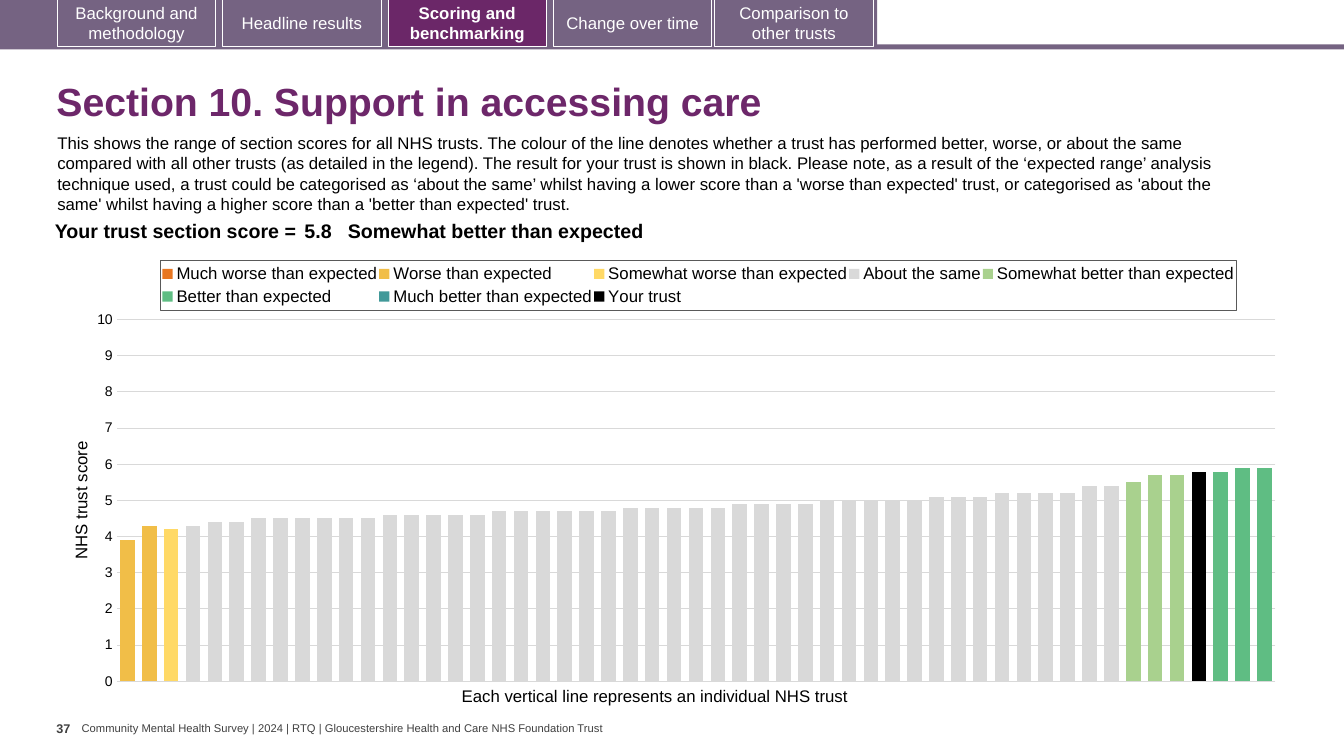
from copy import deepcopy
from dataclasses import dataclass

from pptx import Presentation
from pptx.chart.axis import ValueAxis
from pptx.chart.data import CategoryChartData
from pptx.dml.color import RGBColor
from pptx.enum.chart import XL_CHART_TYPE, XL_LEGEND_POSITION, XL_TICK_LABEL_POSITION, XL_TICK_MARK
from pptx.enum.shapes import MSO_SHAPE
from pptx.enum.text import MSO_ANCHOR, MSO_AUTO_SIZE, PP_ALIGN
from pptx.oxml import parse_xml
from pptx.oxml.ns import nsdecls, qn
from pptx.util import Pt

PX = 9144


@dataclass(frozen=True)
class Theme:
    face: str = "Arial"
    plum: str = "6D276A"
    live: str = "6B2768"
    bar: str = "756382"
    white: str = "FFFFFF"
    ink: str = "000000"
    grey: str = "404040"
    grid: str = "D9D9D9"
    edge: str = "595959"
    head: int = 28
    score: int = 14
    body: int = 12
    tick: int = 10
    page: int = 9
    foot: int = 8


THEME = Theme()

TABS = [
    (57, "Background and methodology"),
    (221, "Headline results"),
    (385, "Scoring and benchmarking"),
    (549, "Change over time"),
    (709, "Comparison to other trusts"),
]
LIVE = 2

INTRO = (
    "This shows the range of section scores for all NHS trusts. The colour of the line denotes "
    "whether a trust has performed better, worse, or about the same compared with all other trusts "
    "(as detailed in the legend). The result for your trust is shown in black. Please note, as a "
    "result of the ‘expected range’ analysis technique used, a trust could be categorised as "
    "‘about the same’ whilst having a lower score than a 'worse than expected' trust, or "
    "categorised as 'about the same' whilst having a higher score than a 'better than expected' trust."
)

COUNT = 53
SAME = [4.3, 4.4, 4.4] + [4.5] * 6 + [4.6] * 5 + [4.7] * 6 + [4.8] * 5 + [4.9] * 4
SAME += [5.0] * 5 + [5.1] * 3 + [5.2] * 4 + [5.4] * 2
BANDS = [
    ("Much worse than expected", "E87722", 0, []),
    ("Worse than expected", "F1BE48", 0, [3.9, 4.3]),
    ("Somewhat worse than expected", "FFD966", 2, [4.2]),
    ("About the same", "D9D9D9", 3, SAME),
    ("Somewhat better than expected", "A9D18E", 46, [5.5, 5.7, 5.7, 5.8]),
    ("Better than expected", "5FBD83", 50, [5.8, 5.9, 5.9]),
    ("Much better than expected", "419999", 0, []),
    ("Your trust", "000000", 49, [5.8]),
]


def scale(*box):
    return [n * PX for n in box]


def style(font, size, tint, bold=False):
    font.name = THEME.face
    font.size = Pt(size)
    font.bold = bold
    font.color.rgb = RGBColor.from_string(tint)


def write(frame, text, size, tint, bold=False, align=PP_ALIGN.LEFT):
    frame.text = text
    line = frame.paragraphs[0]
    line.alignment = align
    style(line.runs[0].font, size, tint, bold)


def label(slide, box, text, size, tint, bold=False, wrap=False, pad=10, anchor=MSO_ANCHOR.TOP):
    frame = slide.shapes.add_textbox(*scale(*box)).text_frame
    frame.word_wrap = wrap
    frame.vertical_anchor = anchor
    frame.margin_left = frame.margin_right = pad * PX
    write(frame, text, size, tint, bold)


def block(slide, box, fill, edge=None):
    shape = slide.shapes.add_shape(MSO_SHAPE.RECTANGLE, *scale(*box))
    shape.shadow.inherit = False
    shape.fill.solid()
    shape.fill.fore_color.rgb = RGBColor.from_string(fill)
    if edge:
        shape.line.color.rgb = RGBColor.from_string(edge)
        shape.line.width = Pt(0.75)
    else:
        shape.line.fill.background()
    return shape


def menu(slide, box):
    left, top, width, height = box
    block(slide, (left, top + 44, width, 5), THEME.bar)
    block(slide, (left, top, 870, height), THEME.bar)
    for i, (x, text) in enumerate(TABS):
        live = i == LIVE
        tab = block(slide, (left + x, top - 1, 157, height), THEME.live if live else THEME.bar, THEME.white)
        tab.text_frame.word_wrap = True
        tab.text_frame.vertical_anchor = MSO_ANCHOR.MIDDLE
        write(tab.text_frame, text, THEME.body, THEME.white, live, PP_ALIGN.CENTER)


def header(slide, box):
    left, top, width, height = box
    title = slide.shapes.title
    title.left, title.top, title.width, title.height = scale(left, top, width, 72)
    frame = title.text_frame
    frame.auto_size = MSO_AUTO_SIZE.NONE
    frame.vertical_anchor = MSO_ANCHOR.MIDDLE
    write(frame, "Section 10. Support in accessing care", THEME.head, THEME.plum, True)
    frame.paragraphs[0].line_spacing = 0.9
    label(slide, (left + 1, top + 60, 1213, height - 60), INTRO, THEME.body, THEME.ink, wrap=True)


def score(slide, box):
    table = slide.shapes.add_table(1, 3, *scale(*box)).table
    table.first_row = table.horz_banding = False
    cells = [
        (263, 4, PP_ALIGN.RIGHT, "Your trust section score ="),
        (47, 4, PP_ALIGN.LEFT, "5.8"),
        (box[2] - 310, 0, PP_ALIGN.LEFT, "Somewhat better than expected"),
    ]
    for i, (width, pad, align, text) in enumerate(cells):
        table.columns[i].width = width * PX
        cell = table.cell(0, i)
        cell.fill.background()
        cell.margin_left = cell.margin_right = pad * PX
        cell.margin_top = cell.margin_bottom = 4 * PX
        write(cell.text_frame, text, THEME.score, THEME.ink, True, align)


def layout(x, y, w, h, inner=False):
    target = '<c:layoutTarget val="inner"/>' if inner else ""
    return parse_xml(
        f'<c:layout {nsdecls("c")}><c:manualLayout>{target}<c:xMode val="edge"/><c:yMode val="edge"/>'
        f'<c:x val="{x}"/><c:y val="{y}"/><c:w val="{w}"/><c:h val="{h}"/></c:manualLayout></c:layout>'
    )


def put(parent, index, part):
    for old in parent.findall(qn("c:layout")):
        parent.remove(old)
    parent.insert(index, part)


def split(area):
    bar, cat, val = (area.find(qn(f"c:{tag}")) for tag in ("barChart", "catAx", "valAx"))
    twin, cat2, val2 = (deepcopy(part) for part in (bar, cat, val))
    bar.remove(bar.findall(qn("c:ser"))[-1])
    for ser in twin.findall(qn("c:ser"))[:-1]:
        twin.remove(ser)
    for node, num in zip(twin.findall(qn("c:axId")), ("111", "222")):
        node.set("val", num)
    for part, own, other in ((cat2, "111", "222"), (val2, "222", "111")):
        part.find(qn("c:axId")).set("val", own)
        part.find(qn("c:crossAx")).set("val", other)
    bar.addnext(twin)
    val.addnext(val2)
    val2.addnext(cat2)
    right = ValueAxis(val2)
    right.has_title = right.has_major_gridlines = False
    right.major_tick_mark = XL_TICK_MARK.OUTSIDE
    right.tick_label_position = XL_TICK_LABEL_POSITION.NONE
    val2.find(qn("c:axPos")).set("val", "r")
    val2.find(qn("c:crosses")).set("val", "max")


def key(chart):
    chart.has_legend = True
    legend = chart.legend
    legend.position = XL_LEGEND_POSITION.TOP
    legend.include_in_layout = False
    style(legend.font, THEME.body, THEME.ink)
    root = legend._element
    put(root, 1, layout(0.076, 0.025, 0.878, 0.112))
    root.find(qn("c:overlay")).addnext(parse_xml(
        f'<c:spPr {nsdecls("c", "a")}><a:noFill/><a:ln w="9525"><a:solidFill>'
        f'<a:srgbClr val="{THEME.edge}"/></a:solidFill></a:ln></c:spPr>'
    ))


def graph(slide, box):
    left, top, width, height = box
    data = CategoryChartData()
    data.categories = [str(n + 1) for n in range(COUNT)]
    for name, tint, start, vals in BANDS:
        data.add_series(name, [None] * start + vals + [None] * (COUNT - start - len(vals)))
    chart = slide.shapes.add_chart(XL_CHART_TYPE.COLUMN_CLUSTERED, *scale(*box), data).chart
    chart.has_title = False
    style(chart.font, THEME.tick, THEME.ink)
    plot = chart.plots[0]
    plot.gap_width, plot.overlap, plot.vary_by_categories = 50, 100, False
    for series, band in zip(plot.series, BANDS):
        series.format.fill.solid()
        series.format.fill.fore_color.rgb = RGBColor.from_string(band[1])
    chart.category_axis.visible = False
    axis = chart.value_axis
    axis.minimum_scale, axis.maximum_scale, axis.major_unit = 0, 10, 1
    axis.major_tick_mark = XL_TICK_MARK.NONE
    axis.tick_labels.number_format = "0"
    axis.tick_labels.number_format_is_linked = False
    style(axis.tick_labels.font, THEME.tick, THEME.ink)
    axis.format.line.fill.background()
    axis.major_gridlines.format.line.color.rgb = RGBColor.from_string(THEME.grid)
    axis.major_gridlines.format.line.width = Pt(0.75)
    write(axis.axis_title.text_frame, "NHS trust score", THEME.body, THEME.ink)
    key(chart)
    area = chart._chartSpace.chart.plotArea
    put(area, 0, layout(0.04, 0.158, 0.946, 0.808, True))
    split(area)
    label(slide, (left + 381, top + height - 16, 411, 30),
          "Each vertical line represents an individual NHS trust", THEME.body, THEME.ink)


def footer(slide, box):
    left, top, width, height = box
    label(slide, (left, top, 25, height), "37", THEME.page, THEME.grey, True, pad=0)
    label(slide, (left + 25, top + 6, width - 25, 13),
          "Community Mental Health Survey | 2024 | RTQ | Gloucestershire Health and Care NHS Foundation Trust",
          THEME.foot, THEME.grey, pad=0, anchor=MSO_ANCHOR.MIDDLE)


def main():
    deck = Presentation()
    deck.slide_width, deck.slide_height = scale(1333, 750)
    slide = deck.slides.add_slide(deck.slide_layouts[5])
    menu(slide, (0, 0, 1333, 47))
    header(slide, (46, 67, 1249, 151))
    graph(slide, (67, 247, 1215, 444))
    score(slide, (35, 215, 1169, 31))
    footer(slide, (56, 710, 549, 40))
    deck.save("out.pptx")


if __name__ == "__main__":
    main()
